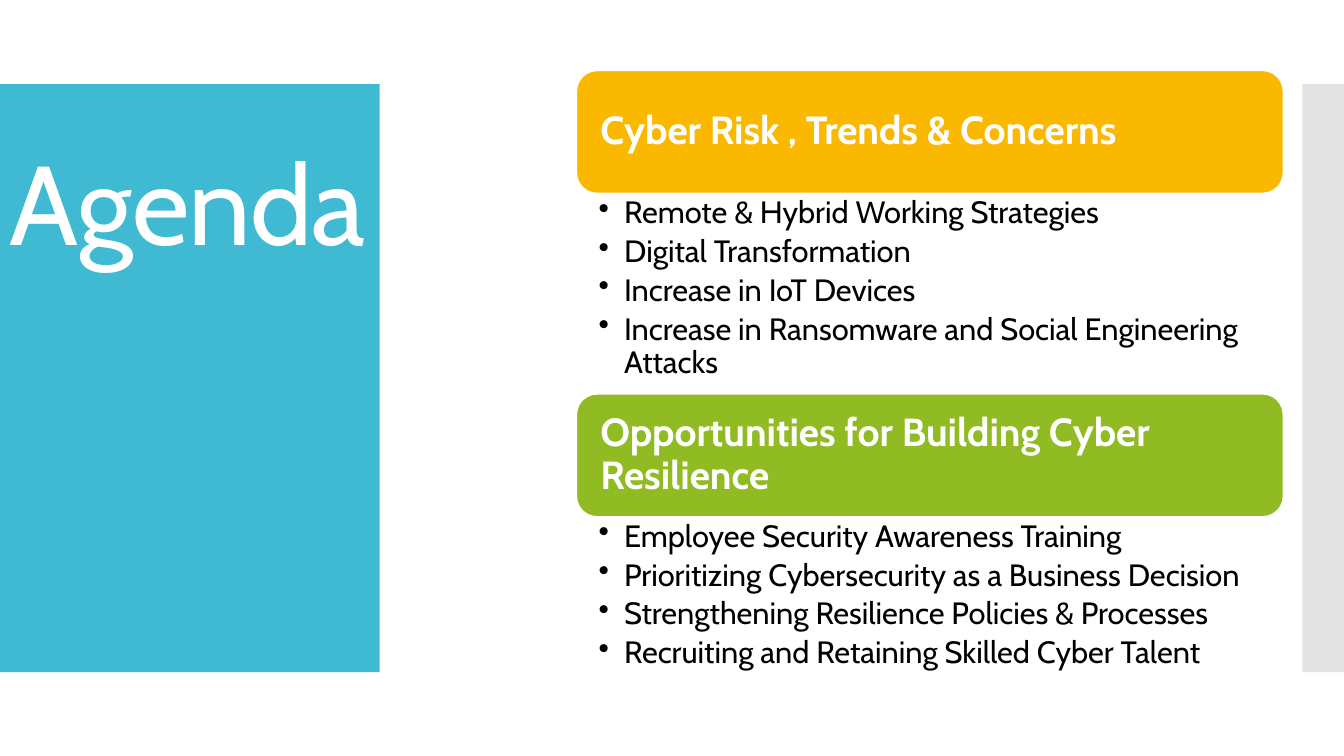
from dataclasses import dataclass

from lxml import etree
from pptx import Presentation
from pptx import util as u
from pptx.dml.color import RGBColor
from pptx.enum import shapes, text
from pptx.oxml import ns


@dataclass(frozen=True)
class Theme:
    font: str = "Cabin"
    teal: str = "40BAD2"
    grey: str = "C8C8C8"
    yellow: str = "FAB900"
    green: str = "90BB23"
    white: str = "FFFFFF"
    black: str = "000000"
    title_size: int = 80
    heading_size: int = 28
    bullet_size: int = 22


@dataclass(frozen=True)
class Box:
    left: float
    top: float
    width: float
    height: float

    def lengths(self) -> tuple:
        return tuple(u.Cm(value) for value in (self.left, self.top, self.width, self.height))


@dataclass(frozen=True)
class Section:
    heading: str
    color: str
    bullets: tuple[str, ...]
    list_height: float


THEME = Theme()
SLIDE_WIDTH, SLIDE_HEIGHT = 33.87, 19.05
PANEL_TOP, PANEL_HEIGHT = 2.12, 14.82
EDGE_WIDTH = 1.05
TITLE_TOP = 3.61
SECTION_LEFT, SECTION_TOP, SECTION_WIDTH = 14.53, 1.78, 17.81
HEADING_HEIGHT = 3.09

SECTIONS = (
    Section("Cyber Risk , Trends & Concerns", THEME.yellow, (
        "Remote & Hybrid Working Strategies",
        "Digital Transformation",
        "Increase in IoT Devices",
        "Increase in Ransomware and Social Engineering Attacks",
    ), 5.06),
    Section("Opportunities for Building Cyber Resilience", THEME.green, (
        "Employee Security Awareness Training",
        "Prioritizing Cybersecurity as a Business Decision",
        "Strengthening Resilience Policies & Processes",
        "Recruiting and Retaining Skilled Cyber Talent",
    ), 4.19),
)


def add_block(slide, kind, box: Box, color: str, outline: str | None = None,
              opacity: int = 100):
    shape = slide.shapes.add_shape(kind, *box.lengths())
    shape.shadow.inherit = False
    shape.fill.solid()
    shape.fill.fore_color.rgb = RGBColor.from_string(color)
    if opacity < 100:
        fill_color = shape.fill._xPr.find(".//" + ns.qn("a:srgbClr"))
        etree.SubElement(fill_color, ns.qn("a:alpha"), val=str(opacity * 1000))
    if outline:
        shape.line.color.rgb = RGBColor.from_string(outline)
        shape.line.width = u.Pt(0.85)
    else:
        shape.line.fill.background()
    return shape


def add_bullet(paragraph) -> None:
    properties = paragraph._p.get_or_add_pPr()
    indent = u.Cm(0.64)
    properties.set("marL", str(indent))
    properties.set("indent", str(-indent))
    etree.SubElement(properties, ns.qn("a:buChar"), char="•")


def write_text(shape, lines: tuple[str, ...], *, size: int, color: str,
               bold: bool = False, bulleted: bool = False, space_after: float = 0,
               tracking: float = 0, inset: tuple[float, float] = (0.25, 0.13),
               anchor=text.MSO_ANCHOR.TOP) -> None:
    frame = shape.text_frame
    frame.word_wrap = True
    frame.vertical_anchor = anchor
    frame.margin_left = frame.margin_right = u.Cm(inset[0])
    frame.margin_top = frame.margin_bottom = u.Cm(inset[1])
    for index, line in enumerate(lines):
        paragraph = frame.add_paragraph() if index else frame.paragraphs[0]
        paragraph.alignment = text.PP_ALIGN.LEFT
        paragraph.line_spacing = 0.9
        paragraph.space_after = u.Pt(space_after)
        if bulleted:
            add_bullet(paragraph)
        run = paragraph.add_run()
        run.text = line
        run.font.name = THEME.font
        run.font.size = u.Pt(size)
        run.font.bold = bold
        run.font.color.rgb = RGBColor.from_string(color)
        if tracking:
            run._r.get_or_add_rPr().set("spc", str(round(tracking * 100)))


def add_section(slide, section: Section, top: float) -> float:
    list_top = top + HEADING_HEIGHT
    heading = add_block(slide, shapes.MSO_SHAPE.ROUNDED_RECTANGLE,
                        Box(SECTION_LEFT, top, SECTION_WIDTH, HEADING_HEIGHT),
                        section.color, outline=THEME.white)
    write_text(heading, (section.heading,), size=THEME.heading_size, color=THEME.white,
               bold=True, inset=(0.45, 0.45), anchor=text.MSO_ANCHOR.MIDDLE)
    list_box = Box(SECTION_LEFT, list_top, SECTION_WIDTH, section.list_height)
    bullets = slide.shapes.add_textbox(*list_box.lengths())
    write_text(bullets, section.bullets, size=THEME.bullet_size, color=THEME.black,
               bulleted=True, space_after=4, inset=(0.56, 0.1))
    return list_top + section.list_height


def main() -> None:
    presentation = Presentation()
    presentation.slide_width = u.Cm(SLIDE_WIDTH)
    presentation.slide_height = u.Cm(SLIDE_HEIGHT)
    slide = presentation.slides.add_slide(presentation.slide_layouts[6])

    add_block(slide, shapes.MSO_SHAPE.RECTANGLE,
              Box(0, PANEL_TOP, 9.57, PANEL_HEIGHT), THEME.teal)
    add_block(slide, shapes.MSO_SHAPE.RECTANGLE,
              Box(SLIDE_WIDTH - EDGE_WIDTH, PANEL_TOP, EDGE_WIDTH, PANEL_HEIGHT),
              THEME.grey, opacity=50)

    title_box = Box(0, TITLE_TOP, 12.5, SLIDE_HEIGHT - TITLE_TOP)
    title = slide.shapes.add_textbox(*title_box.lengths())
    write_text(title, ("Agenda",), size=THEME.title_size, color=THEME.white, tracking=-0.6)

    top = SECTION_TOP
    for section in SECTIONS:
        top = add_section(slide, section, top)

    presentation.save("out.pptx")


if __name__ == "__main__":
    main()
